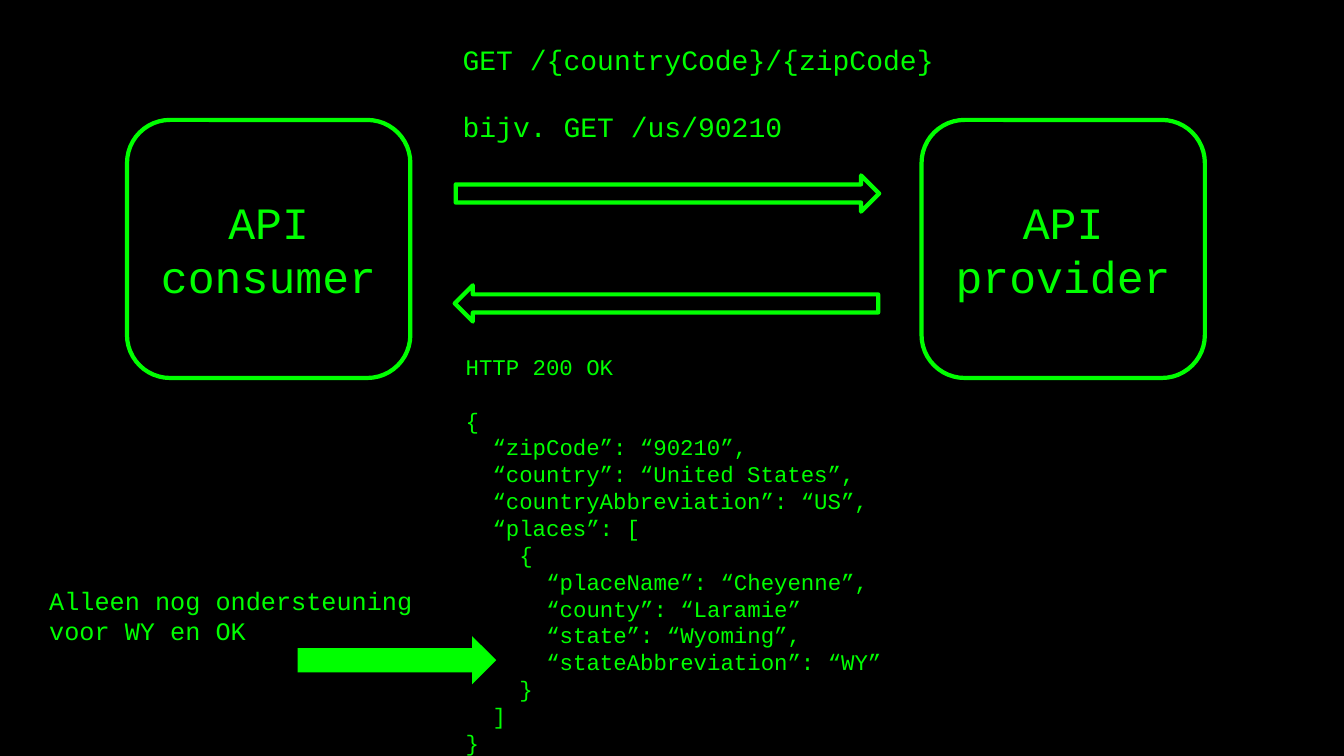
import pptx
import pptx.util
import pptx.dml.color
import pptx.enum.shapes
import pptx.enum.text

Inches, Pt = pptx.util.Inches, pptx.util.Pt
SHAPES = pptx.enum.shapes.MSO_SHAPE
COLORS = {"background": "000000", "terminal": "00FF00"}
FONT = "Courier New"
WIDTH, HEIGHT = 13.33, 7.5
CHARACTER_WIDTH = 0.6  # share of the font size
LINE_HEIGHT = 1.21

REQUEST = [(0, "GET /{countryCode}/{zipCode}"), (0, "bijv. GET /us/90210")]
# Each line: indent in characters, text
RESPONSE = [
    (0, "HTTP 200 OK"),
    (0, "{"),
    (2, "“zipCode”: “90210”,"),
    (2, "“country”: “United States”,"),
    (2, "“countryAbbreviation”: “US”,"),
    (2, "“places”: ["),
    (4, "{"),
    (6, "“placeName”: “Cheyenne”,"),
    (6, "“county”: “Laramie”"),
    (6, "“state”: “Wyoming”,"),
    (6, "“stateAbbreviation”: “WY”"),
    (4, "}"),
    (2, "]"),
    (0, "}"),
]


def color(name):
    return pptx.dml.color.RGBColor.from_string(COLORS[name])


def style_paragraph(paragraph, size):
    paragraph.font.name = FONT
    paragraph.font.size = Pt(size)
    paragraph.font.color.rgb = color("terminal")


def add_outline(slide, kind, box):
    shape = slide.shapes.add_shape(kind, *map(Inches, box))
    shape.shadow.inherit = False
    shape.fill.background()
    shape.line.color.rgb = color("terminal")
    shape.line.width = Pt(3)
    return shape


def add_party(slide, box, name):
    shape = add_outline(slide, SHAPES.ROUNDED_RECTANGLE, box)
    frame = shape.text_frame
    frame.word_wrap = True
    frame.vertical_anchor = pptx.enum.text.MSO_ANCHOR.MIDDLE
    paragraph = frame.paragraphs[0]
    paragraph.text = name
    paragraph.alignment = pptx.enum.text.PP_ALIGN.CENTER
    style_paragraph(paragraph, 32)


def add_lines(slide, box, lines, size, gap_after_first=False):
    frame = slide.shapes.add_textbox(*map(Inches, box)).text_frame
    frame.word_wrap = True
    for index, (indent, text) in enumerate(lines):
        paragraph = frame.add_paragraph() if index else frame.paragraphs[0]
        paragraph.text = text
        style_paragraph(paragraph, size)
        if indent:
            margin = Pt(indent * CHARACTER_WIDTH * size)
            properties = paragraph._p.get_or_add_pPr()
            properties.set("marL", str(int(margin)))
            properties.set("indent", "0")
    if gap_after_first:
        frame.paragraphs[0].space_after = Pt(LINE_HEIGHT * size)


def add_exchange(slide, box):
    """Two parties with the request and response arrows between them."""
    left, top, width, height = box
    party_width = 2.81
    add_party(slide, (left, top, party_width, height), "API consumer")
    add_party(slide, (left + width - party_width, top, party_width, height), "API provider")
    arrow_left = left + 3.26
    add_outline(slide, SHAPES.RIGHT_ARROW, (arrow_left, top + 0.55, 4.2, 0.36))
    response = add_outline(slide, SHAPES.RIGHT_ARROW, (arrow_left - 0.01, top + 1.64, 4.2, 0.36))
    response.rotation = 180


def add_messages(slide, box):
    """Request above the arrows, response below them."""
    left, top, width, height = box
    add_lines(slide, (left, top, 5.06, 1.11), REQUEST, 20, gap_after_first=True)
    response_top = 3.08
    add_lines(slide, (left + 0.03, top + response_top, width, height - response_top),
              RESPONSE, 16, gap_after_first=True)


def add_support_note(slide, box):
    """Remark with a solid arrow to the state in the response."""
    left, top, width, height = box
    arrow = add_outline(slide, SHAPES.RIGHT_ARROW,
                        (left + 0.6 * width, top + 0.55, 1.97, 0.48))
    arrow.fill.solid()
    arrow.fill.fore_color.rgb = color("terminal")
    arrow.line.fill.background()
    add_lines(slide, box, [(0, "Alleen nog ondersteuning voor WY en OK")], 18)


def main():
    presentation = pptx.Presentation()
    presentation.slide_width = Inches(WIDTH)
    presentation.slide_height = Inches(HEIGHT)
    slide = presentation.slides.add_slide(presentation.slide_layouts[6])
    slide.background.fill.solid()
    slide.background.fill.fore_color.rgb = color("background")

    add_exchange(slide, (1.26, 1.19, 10.69, 2.56))
    add_messages(slide, (4.49, 0.37, 6.19, 7.22))
    add_support_note(slide, (0.39, 5.76, 4.27, 0.71))
    presentation.save("out.pptx")


if __name__ == "__main__":
    main()
